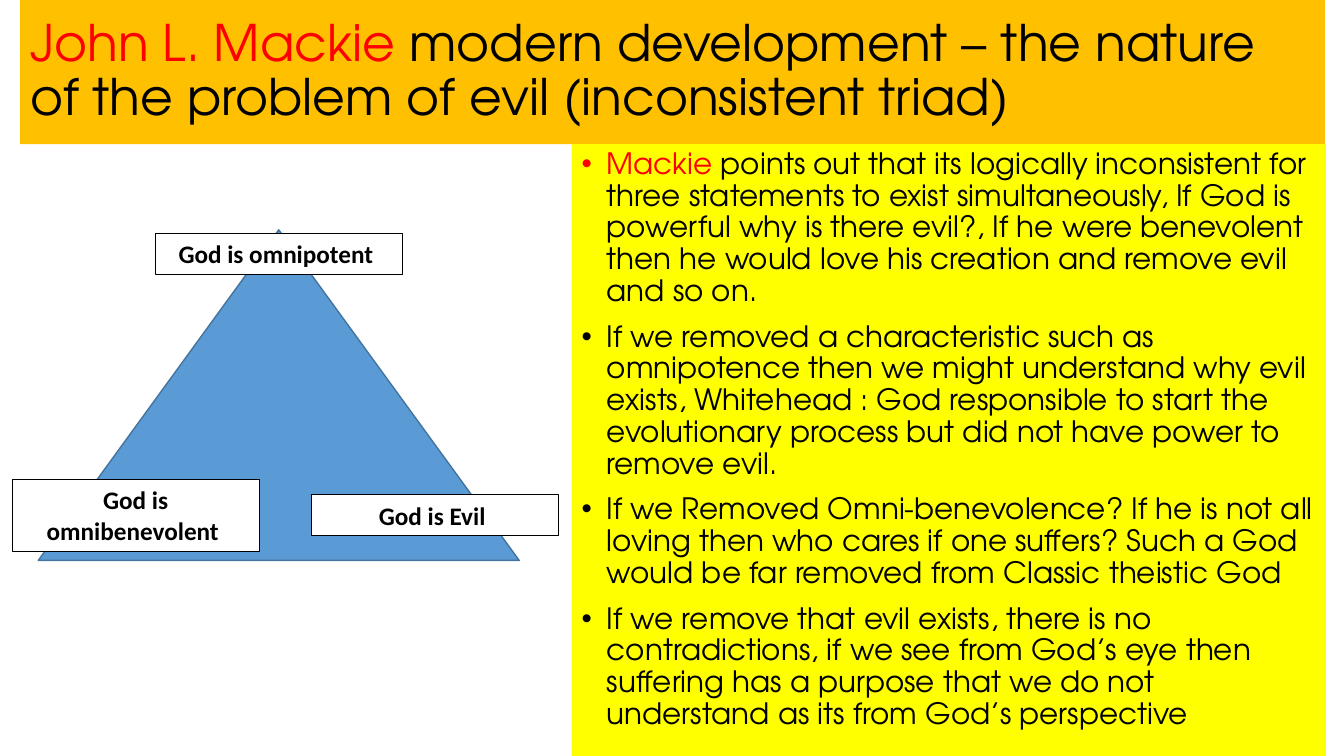
from lxml import etree
from pptx import Presentation
from pptx.dml.color import RGBColor
from pptx.enum.shapes import MSO_SHAPE
from pptx.enum.text import MSO_ANCHOR, PP_ALIGN
from pptx.oxml.ns import qn
from pptx.util import Emu, Pt

RECT, TRIANGLE = MSO_SHAPE.RECTANGLE, MSO_SHAPE.ISOSCELES_TRIANGLE
TOP, MIDDLE = MSO_ANCHOR.TOP, MSO_ANCHOR.MIDDLE
LEFT, CENTER = PP_ALIGN.LEFT, PP_ALIGN.CENTER

PX = 9144  # 100 px to the inch
COLORS = {"white": "FFFFFF", "black": "000000", "red": "FF0000",
          "orange": "FFC000", "yellow": "FFFF00",
          "blue": "5B9BD5", "edge": "43739E"}
HEADING_FONT, LABEL_FONT = "TeX Gyre Adventor", "Calibri"

TITLE = [("John L. Mackie ", "red"),
         ("modern development – the nature of the problem of evil (inconsistent triad)", "black")]
POINTS = [
    [("Mackie", "red"),
     (" points out that its logically inconsistent for three statements to exist "
      "simultaneously, If God is powerful why is there evil?, If he were benevolent then "
      "he would love his creation and remove evil and so on.", "black")],
    [("If we removed a characteristic such as omnipotence then we might understand why evil "
      "exists, Whitehead : God responsible to start the evolutionary process but did not "
      "have power to remove evil.", "black")],
    [("If we Removed Omni-benevolence? If he is not all loving then who cares if one "
      "suffers? Such a God would be far removed from Classic theistic God", "black")],
    [("If we remove that evil exists, there is no contradictions, if we see from God’s eye "
      "then suffering has a purpose that we do not understand as its from God’s "
      "perspective", "black")],
]
# text, left, top, height
CORNERS = [("God is omnipotent ", 154, 232, 40),
           ("God is omnibenevolent ", 12, 476, 71),
           ("God is Evil ", 309, 491, 40)]


def rgb(name):
    return RGBColor.from_string(COLORS[name])


def write(shape, paragraphs, *, size, font, bold=False, align=LEFT, anchor=TOP,
          line_spacing=1.0, before=0, bullet=False):
    """Fill a shape with paragraphs, each a list of (text, colour) runs."""
    frame = shape.text_frame
    frame.word_wrap = True
    frame.vertical_anchor = anchor
    for index, runs in enumerate(paragraphs):
        paragraph = frame.paragraphs[0] if index == 0 else frame.add_paragraph()
        paragraph.alignment = align
        paragraph.line_spacing = line_spacing
        paragraph.space_before = Pt(before)
        if bullet:
            props = paragraph._p.get_or_add_pPr()
            props.set("marL", str(25 * PX))
            props.set("indent", str(-25 * PX))
            etree.SubElement(props, qn("a:buFont")).set("typeface", "Arial")
            etree.SubElement(props, qn("a:buChar")).set("char", "•")
        for text, color in runs:
            run = paragraph.add_run()
            run.text = text
            run.font.size = Pt(size)
            run.font.name = font
            run.font.bold = bold
            run.font.color.rgb = rgb(color)


class TriadSlide:
    def __init__(self, deck):
        self.slide = deck.slides.add_slide(deck.slide_layouts[6])

    def shape(self, kind, left, top, width, height, fill, line=None, weight=1):
        box = (Emu(value * PX) for value in (left, top, width, height))
        shape = self.slide.shapes.add_shape(kind, *box)
        shape.shadow.inherit = False
        shape.fill.solid()
        shape.fill.fore_color.rgb = rgb(fill)
        if line:
            shape.line.color.rgb = rgb(line)
            shape.line.width = Pt(weight)
        else:
            shape.line.fill.background()
        return shape

    def title(self, runs):
        banner = self.shape(RECT, 20, 0, 1294, 143, "orange")
        write(banner, [runs], size=36, font=HEADING_FONT, anchor=MIDDLE, line_spacing=0.9)

    def points(self, paragraphs):
        panel = self.shape(RECT, 567, 143, 748, 607, "yellow")
        write(panel, paragraphs, size=21, font=HEADING_FONT, line_spacing=0.9,
              before=10, bullet=True)

    def corner(self, text, left, top, height):
        label = self.shape(RECT, left, top, 245, height, "white", "black", 0.75)
        write(label, [[(text, "black")]], size=18, font=LABEL_FONT, bold=True, align=CENTER)


def main():
    deck = Presentation()
    deck.slide_width, deck.slide_height = Emu(1333 * PX), Emu(750 * PX)
    triad = TriadSlide(deck)

    # Heading and argument
    triad.title(TITLE)
    triad.points(POINTS)

    # Inconsistent triad
    triad.shape(TRIANGLE, 38, 228, 477, 328, "blue", "edge")
    for corner in CORNERS:
        triad.corner(*corner)

    deck.save("out.pptx")


if __name__ == "__main__":
    main()
